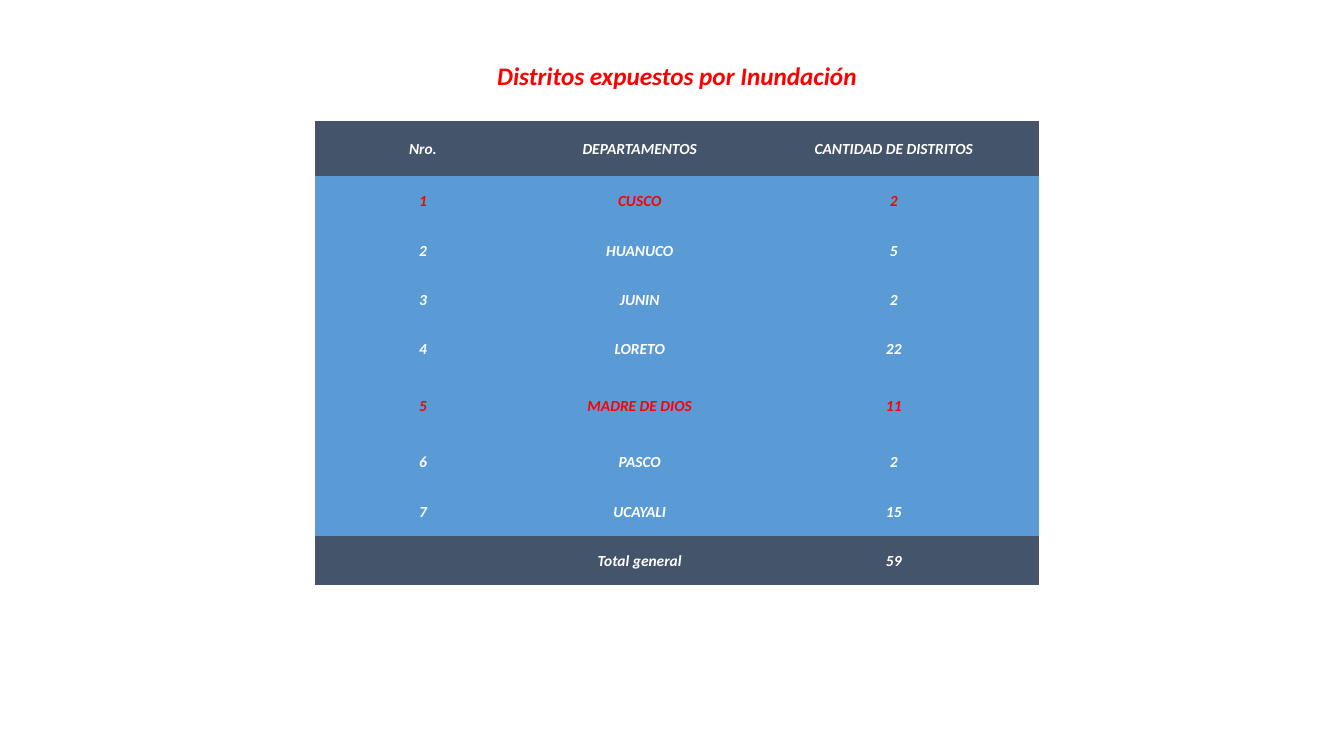
from pptx import Presentation
from pptx.dml.color import RGBColor
from pptx.enum.text import MSO_ANCHOR, MSO_AUTO_SIZE, PP_ALIGN
from pptx.util import Inches, Pt

CENTER = PP_ALIGN.CENTER
MIDDLE = MSO_ANCHOR.MIDDLE
GROW = MSO_AUTO_SIZE.SHAPE_TO_FIT_TEXT
RED = RGBColor(0xFF, 0x00, 0x00)
WHITE = RGBColor(0xFF, 0xFF, 0xFF)
SLATE = RGBColor(0x44, 0x54, 0x6A)
BLUE = RGBColor(0x5B, 0x9B, 0xD5)
NO_STYLE_NO_GRID = "{2D5ABB26-0587-4C30-8999-92F81FD0307C}"

FONT = {"name": "Calibri", "bold": True, "italic": True}
CELL = {
    "vertical_anchor": MIDDLE,
    "margin_left": Inches(0.01),
    "margin_right": Inches(0.01),
    "margin_top": Inches(0.01),
    "margin_bottom": Inches(0),
}
ROWS = [
    ("Nro.", "DEPARTAMENTOS", "CANTIDAD DE DISTRITOS"),
    ("1", "CUSCO", "2"),
    ("2", "HUANUCO", "5"),
    ("3", "JUNIN", "2"),
    ("4", "LORETO", "22"),
    ("5", "MADRE DE DIOS", "11"),
    ("6", "PASCO", "2"),
    ("7", "UCAYALI", "15"),
    ("", "Total general", "59"),
]
HIGHLIGHTED = {"CUSCO", "MADRE DE DIOS"}
COLUMN_WIDTHS = [2.15, 2.15, 2.89]
ROW_HEIGHTS = [0.55] + [0.49] * 4 + [0.63] + [0.49] * 3


def write_centered(paragraph, text, size, color):
    paragraph.alignment = CENTER
    run = paragraph.add_run()
    run.text = text
    for key, value in FONT.items():
        setattr(run.font, key, value)
    run.font.size = Pt(size)
    run.font.color.rgb = color


prs = Presentation()
prs.slide_width = Inches(13.33)
prs.slide_height = Inches(7.5)
slide = prs.slides.add_slide(prs.slide_layouts[6])

# Title
title = slide.shapes.add_textbox(Inches(4.81), Inches(0.55), Inches(3.81), Inches(0.4))
title.text_frame.word_wrap = False
title.text_frame.auto_size = GROW
write_centered(title.text_frame.paragraphs[0], "Distritos expuestos por Inundación", 18, RED)

# Table of districts without a banded style
districts = slide.shapes.add_table(
    len(ROWS), len(COLUMN_WIDTHS), Inches(3.12), Inches(1.2),
    Inches(sum(COLUMN_WIDTHS)), Inches(sum(ROW_HEIGHTS))).table
districts.first_row = False
districts.horz_banding = False
districts._tbl.tblPr.find("{*}tableStyleId").text = NO_STYLE_NO_GRID
for column, width in zip(districts.columns, COLUMN_WIDTHS):
    column.width = Inches(width)

# Header, departments and total
for index, (row, height, values) in enumerate(zip(districts.rows, ROW_HEIGHTS, ROWS)):
    row.height = Inches(height)
    fill_color = SLATE if index in (0, len(ROWS) - 1) else BLUE
    text_color = RED if values[1] in HIGHLIGHTED else WHITE
    for cell, value in zip(row.cells, values):
        for key, setting in CELL.items():
            setattr(cell, key, setting)
        cell.fill.solid()
        cell.fill.fore_color.rgb = fill_color
        if value:
            write_centered(cell.text_frame.paragraphs[0], value, 11, text_color)

prs.save("out.pptx")
